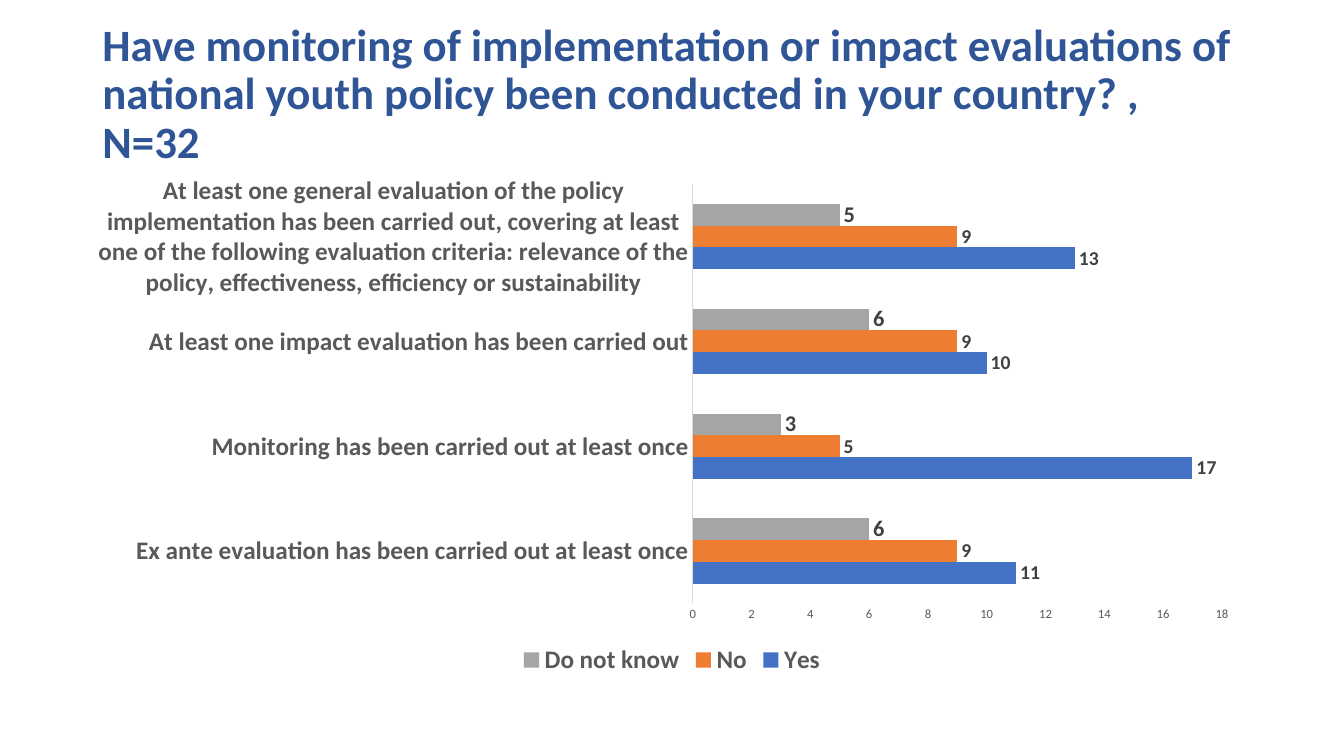
from pptx import Presentation
from pptx.chart.data import CategoryChartData
from pptx.dml.color import RGBColor
from pptx.enum.chart import XL_CHART_TYPE as ChartType
from pptx.enum.chart import XL_LABEL_POSITION as LabelPosition
from pptx.enum.chart import XL_LEGEND_POSITION as LegendPosition
from pptx.enum.chart import XL_TICK_MARK as TickMark
from pptx.enum.text import MSO_AUTO_SIZE as AutoSize
from pptx.enum.text import MSO_VERTICAL_ANCHOR as Anchor
from pptx.enum.text import PP_ALIGN as Align
from pptx.util import Pt

TITLE = ("Have monitoring of implementation or impact evaluations of national "
         "youth policy been conducted in your country? , N=32")
CATEGORIES = [
    "Ex ante evaluation has been carried out at least once",
    "Monitoring has been carried out at least once",
    "At least one impact evaluation has been carried out",
    "At least one general evaluation of the policy implementation has been "
    "carried out, covering at least one of the following evaluation criteria: "
    "relevance of the policy, effectiveness, efficiency or sustainability",
]
# name, values, bar colour, label size
ANSWERS = [
    ("Yes", (11, 17, 10, 13), "4472C4", 14),
    ("No", (9, 5, 9, 9), "ED7D31", 14),
    ("Do not know", (6, 3, 6, 5), "A5A5A5", 16),
]


def paint(color_format, color):
    color_format.rgb = RGBColor.from_string(color)


def assign(target, values):
    """Set each attribute named in the dict on the target."""
    for name, value in values.items():
        setattr(target, name, value)


class SlideBuilder:
    font_name = "Calibri"
    title_color = "2F5597"
    text_color = "595959"
    label_color = "404040"
    axis_color = "D9D9D9"

    def __init__(self, presentation):
        self.slide = presentation.slides.add_slide(presentation.slide_layouts[5])

    def format_font(self, font, size, color, bold=True):
        assign(font, {"name": self.font_name, "size": Pt(size), "bold": bold})
        paint(font.color, color)

    def add_title(self, text, left, top, width, height):
        title = self.slide.shapes.title
        assign(title, {"left": Pt(left), "top": Pt(top),
                       "width": Pt(width), "height": Pt(height)})
        assign(title.text_frame, {"text": text, "word_wrap": True,
                                  "auto_size": AutoSize.NONE,
                                  "vertical_anchor": Anchor.MIDDLE})
        paragraph = title.text_frame.paragraphs[0]
        assign(paragraph, {"alignment": Align.LEFT, "line_spacing": 0.9})
        self.format_font(paragraph.runs[0].font, 32, self.title_color)

    def add_bar_chart(self, categories, answers, left, top, width, height):
        data = CategoryChartData()
        data.categories = categories
        for name, values, *_ in answers:
            data.add_series(name, values)
        chart = self.slide.shapes.add_chart(
            ChartType.BAR_CLUSTERED, Pt(left), Pt(top), Pt(width), Pt(height), data).chart
        assign(chart, {"has_title": False, "has_legend": True})
        self.format_font(chart.font, 10, "000000", bold=False)
        assign(chart.legend, {"position": LegendPosition.BOTTOM, "include_in_layout": False})
        self.format_font(chart.legend.font, 18, self.text_color)
        self.format_axes(chart)
        assign(chart.plots[0], {"gap_width": 182, "overlap": 0, "vary_by_categories": False})
        for series, (*_, color, label_size) in zip(chart.plots[0].series, answers):
            self.format_series(series, color, label_size)

    def format_axes(self, chart):
        for axis, size, bold in ((chart.category_axis, 18, True),
                                 (chart.value_axis, 9, False)):
            assign(axis, {"major_tick_mark": TickMark.NONE, "minor_tick_mark": TickMark.NONE,
                          "has_major_gridlines": False})
            self.format_font(axis.tick_labels.font, size, self.text_color, bold)
        category_line = chart.category_axis.format.line
        category_line.width = Pt(0.75)
        paint_line = category_line.fill
        paint_line.solid()
        paint(paint_line.fore_color, self.axis_color)
        assign(chart.value_axis, {"minimum_scale": 0, "maximum_scale": 18, "major_unit": 2})
        chart.value_axis.format.line.fill.background()

    def format_series(self, series, color, label_size):
        series.format.fill.solid()
        paint(series.format.fill.fore_color, color)
        assign(series.data_labels, {"show_value": True, "position": LabelPosition.OUTSIDE_END})
        self.format_font(series.data_labels.font, label_size, self.label_color)


def main():
    presentation = Presentation()
    assign(presentation, {"slide_width": Pt(960), "slide_height": Pt(540)})
    builder = SlideBuilder(presentation)
    builder.add_title(TITLE, 66, 28.75, 828, 78.5)
    builder.add_bar_chart(CATEGORIES, ANSWERS, 66, 118, 828, 368)
    presentation.save("out.pptx")


if __name__ == "__main__":
    main()
